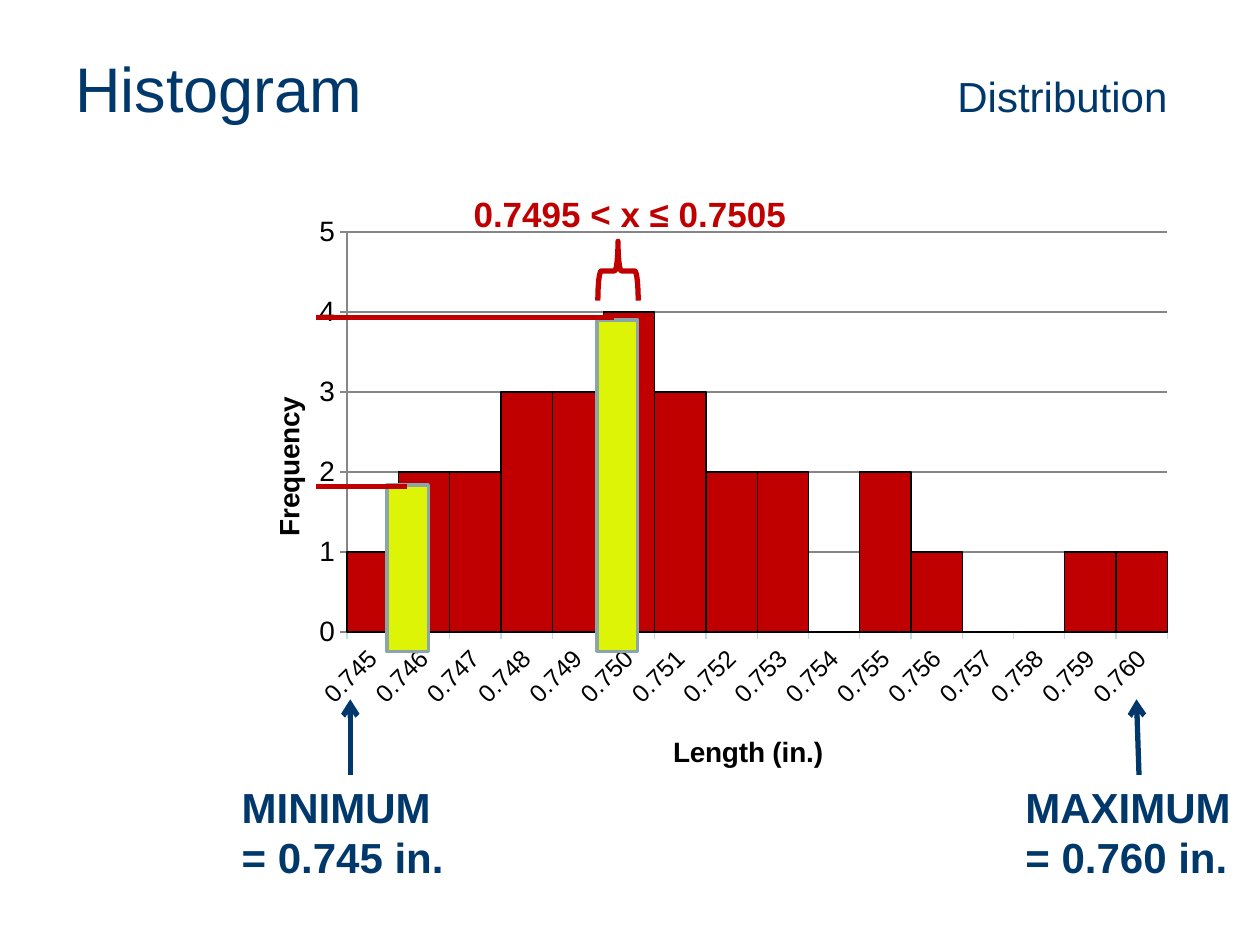
import lxml.etree
import pptx
import pptx.chart.data
import pptx.dml.color
import pptx.enum.chart
import pptx.enum.shapes
import pptx.enum.text
import pptx.oxml.ns
import pptx.util

# Content
START = 0.745
COUNTS = [1, 2, 2, 3, 3, 4, 3, 2, 2, 0, 2, 1, 0, 0, 1, 1]
LABELS = [f"{START + i / 1000:.3f}" for i in range(len(COUNTS))]
AXES = {"x": ("Length (in.)", 0.458, 0.9), "y": ("Frequency", 0.037, 0.32)}
CHART = (1.83, 1.63, 7.58, 4.62)
PLOT = {"x": 0.122, "y": 0.046, "w": 0.859, "h": 0.687}
BASE = 5.17
MARKS = [  # bar left, top, width; level line y and end
    (3.07, 3.85, 0.33, 3.86, 3.23),
    (4.74, 2.54, 0.32, 2.52, 4.87),
]
ENDS = [  # text, box left, arrow foot x, arrow tip x
    ("MINIMUM = 0.745 in.", 1.82, 2.78, 2.78),
    ("MAXIMUM = 0.760 in.", 8.04, 9.04, 9.02),
]

THEME = {
    "font": "Arial", "navy": "00386B", "red": "C00000", "lime": "DDF406",
    "edge": "8AA6A8", "pale": "BBE0E3", "grid": "868686", "black": "000000",
    "head": 36, "note": 24, "range": 20, "axis": 16, "tick": 14,
    "thick": 3, "mid": 2, "thin": 0.75,
}

Inches = pptx.util.Inches
qn = pptx.oxml.ns.qn
deck = pptx.Presentation()
deck.slide_width, deck.slide_height = Inches(10), Inches(7.5)
slide = deck.slides.add_slide(deck.slide_layouts[6])


def tint(name):
    return pptx.dml.color.RGBColor.from_string(THEME[name])


def style(font, size, color="black", bold=False):
    font.name, font.size, font.bold = THEME["font"], pptx.util.Pt(THEME[size]), bold
    font.color.rgb = tint(color)


def stroke(line, color, width):
    line.color.rgb = tint(color)
    line.width = pptx.util.Pt(THEME[width])


def write(text, box, size="note", color="navy", bold=True, middle=False, wrap=True):
    """Add a text box; text is a string or a list of (text, size) runs."""
    frame = slide.shapes.add_textbox(*map(Inches, box)).text_frame
    frame.word_wrap = wrap
    if middle:
        frame.vertical_anchor = pptx.enum.text.MSO_ANCHOR.MIDDLE
    para = frame.paragraphs[0]
    for part, scale in [(text, size)] if isinstance(text, str) else text:
        run = para.add_run()
        run.text = part
        style(run.font, scale, color, bold)
    return para


def draw(kind, box, color, width, fill=None):
    shape = slide.shapes.add_shape(kind, *map(Inches, box))
    shape.shadow.inherit = False
    stroke(shape.line, color, width)
    if fill:
        shape.fill.solid()
        shape.fill.fore_color.rgb = tint(fill)
    else:
        shape.fill.background()
    return shape


def link(start, end, color, arrow=False):
    line = slide.shapes.add_connector(
        pptx.enum.shapes.MSO_CONNECTOR.STRAIGHT, *map(Inches, start + end))
    stroke(line.line, color, "thick")
    if arrow:
        lxml.etree.SubElement(line.line._get_or_add_ln(), qn("a:tailEnd"), type="arrow")
    lxml.etree.SubElement(line._element.spPr, qn("a:effectLst"))


def place(parent, index, inner=False, **parts):
    """Give a chart part a fixed spot, as fractions of the chart."""
    for old in parent.findall(qn("c:layout")):
        parent.remove(old)
    layout = lxml.etree.Element(qn("c:layout"))
    parent.insert(index, layout)
    spot = lxml.etree.SubElement(layout, qn("c:manualLayout"))
    rules = {"layoutTarget": "inner"} if inner else {}
    rules |= {"xMode": "edge", "yMode": "edge"} | parts
    for key, val in rules.items():
        lxml.etree.SubElement(spot, qn("c:" + key), val=str(val))


def title(axis, text, left, top):
    para = axis.axis_title.text_frame.paragraphs[0]
    run = para.add_run()
    run.text = text
    style(run.font, "axis", bold=True)
    place(axis.axis_title._element, 1, x=left, y=top)


# Histogram chart
data = pptx.chart.data.CategoryChartData()
data.categories = LABELS
data.add_series("Series 1", COUNTS)
chart = slide.shapes.add_chart(
    pptx.enum.chart.XL_CHART_TYPE.COLUMN_CLUSTERED, *map(Inches, CHART), data).chart
chart.has_legend = chart.has_title = False
style(chart.font, "tick")
plot = chart.plots[0]
plot.gap_width, plot.vary_by_categories = 0, False
bars = plot.series[0].format
bars.fill.solid()
bars.fill.fore_color.rgb = tint("red")
stroke(bars.line, "black", "thin")
place(chart._chartSpace.chart.plotArea, 0, inner=True, **PLOT)

# Axes
cat, val = chart.category_axis, chart.value_axis
for axis, name, size, color in ((cat, "x", "tick", "pale"), (val, "y", "axis", "grid")):
    title(axis, *AXES[name])
    style(axis.tick_labels.font, size)
    stroke(axis.format.line, color, "thin")
    axis.major_tick_mark = pptx.enum.chart.XL_TICK_MARK.OUTSIDE
cat._element.find(qn("c:txPr")).find(qn("a:bodyPr")).set("rot", str(-45 * 60000))
val.minimum_scale, val.maximum_scale, val.major_unit = 0, 5, 1
val.has_major_gridlines = True
stroke(val.major_gridlines.format.line, "grid", "thin")

# Marked bars and their level lines
SHAPE = pptx.enum.shapes.MSO_SHAPE
for left, top, width, level, end in MARKS:
    draw(SHAPE.RECTANGLE, (left, top, width, BASE - top), "edge", "mid", "lime")
for left, top, width, level, end in MARKS:
    link((2.51, level), (end, level), "red")

# Smallest and largest values
for text, left, foot, tip in ENDS:
    write(text, (left, 6.15, 1.93, 0.91))
    link((foot, 6.15), (tip, 5.55), "navy", arrow=True)

# Heading, with a tab stop for the second part
head = write([("Histogram\t", "head"), ("Distribution", "note")],
             (0.5, 0.3, 9, 0.78), bold=False, middle=True)
tabs = lxml.etree.SubElement(head._p.get_or_add_pPr(), qn("a:tabLst"))
lxml.etree.SubElement(tabs, qn("a:tab"), pos=str(Inches(7)), algn="l")

# Brace and its range
brace = draw(SHAPE.RIGHT_BRACE, (4.67, 1.99, 0.47, 0.32), "red", "thick")
brace.rotation = 270
write("0.7495 < x ≤ 0.7505", (3.66, 1.48, 2.71, 0.44), "range", "red", wrap=False)

deck.save("out.pptx")
